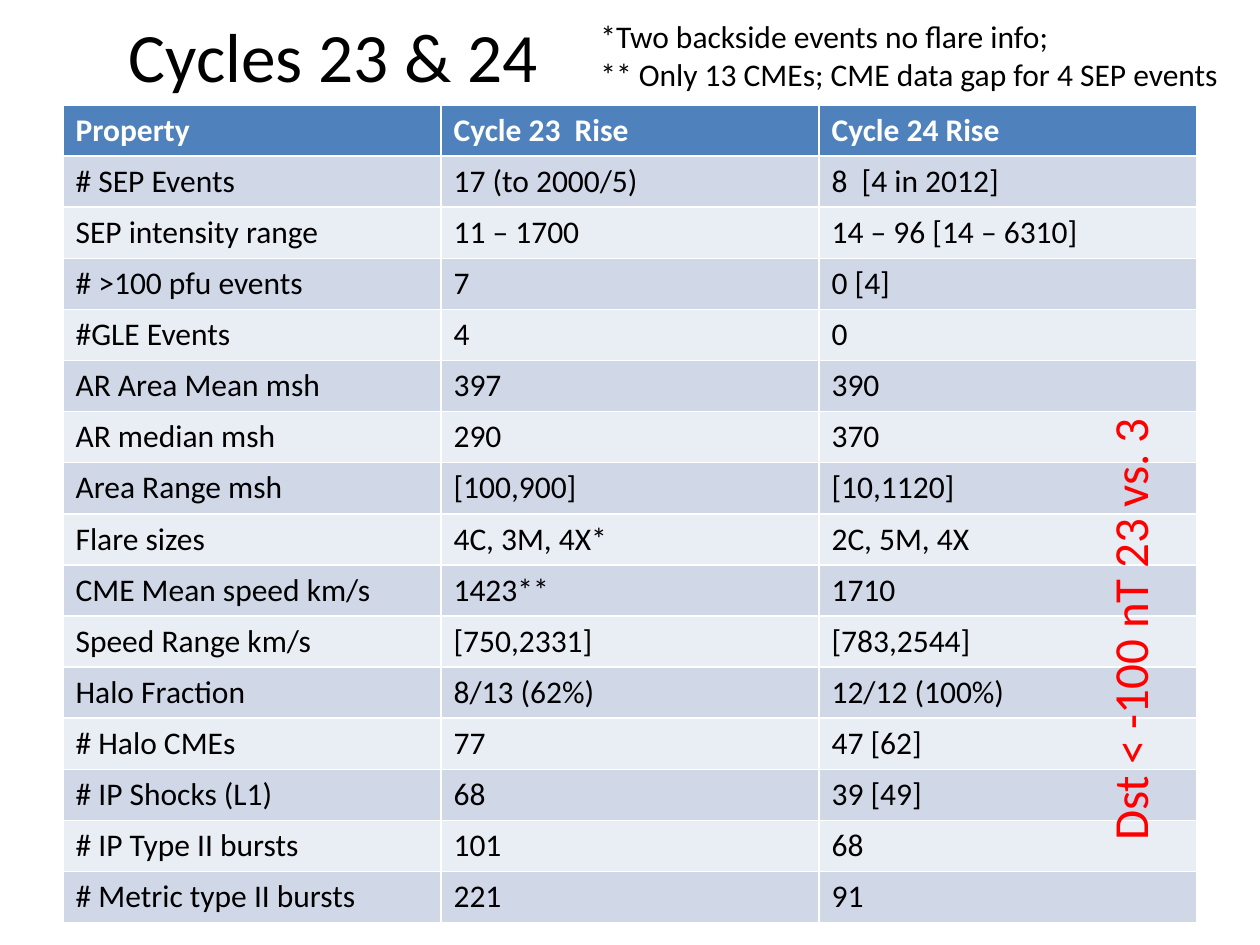
from pptx import Presentation
from pptx.dml.color import RGBColor
from pptx.enum.text import MSO_ANCHOR, MSO_AUTO_SIZE, PP_ALIGN
from pptx.util import Pt

FONT = "Calibri"
BLACK, WHITE, RED = "000000", "FFFFFF", "FF0000"
HEADER_FILL = "4F81BD"
BAND_FILLS = ("E9EDF4", "D0D8E8")
COLUMN_WIDTH, ROW_HEIGHT = 216, 29.2

ROWS = [
    ("Property", "Cycle 23  Rise", "Cycle 24 Rise"),
    ("# SEP Events", "17 (to 2000/5)", "8  [4 in 2012]"),
    ("SEP intensity range", "11 – 1700", "14 – 96 [14 – 6310]"),
    ("# >100 pfu events", "7", "0 [4]"),
    ("#GLE Events", "4", "0"),
    ("AR Area Mean msh", "397", "390"),
    ("AR median msh", "290", "370"),
    ("Area Range msh", "[100,900]", "[10,1120]"),
    ("Flare sizes", "4C, 3M, 4X*", "2C, 5M, 4X"),
    ("CME Mean speed km/s", "1423**", "1710"),
    ("Speed Range km/s", "[750,2331]", "[783,2544]"),
    ("Halo Fraction", "8/13 (62%)", "12/12 (100%)"),
    ("# Halo CMEs", "77", "47 [62]"),
    ("# IP Shocks (L1)", "68", "39 [49]"),
    ("# IP Type II bursts", "101", "68"),
    ("# Metric type II bursts", "221", "91"),
]


def color(value):
    return RGBColor.from_string(value)


def write_text(text_frame, text, size, text_color, bold=False):
    text_frame.text = text
    for paragraph in text_frame.paragraphs:
        for run in paragraph.runs:
            run.font.name = FONT
            run.font.size = Pt(size)
            run.font.bold = bold
            run.font.color.rgb = color(text_color)


def set_title(slide, text, left, top, width, height):
    title = slide.shapes.title
    title.left, title.top = Pt(left), Pt(top)
    title.width, title.height = Pt(width), Pt(height)
    text_frame = title.text_frame
    write_text(text_frame, text, 39.6, BLACK)
    text_frame.auto_size = MSO_AUTO_SIZE.NONE
    text_frame.vertical_anchor = MSO_ANCHOR.MIDDLE
    text_frame.paragraphs[0].alignment = PP_ALIGN.CENTER


def add_property_table(slide, left, top):
    row_count, column_count = len(ROWS), len(ROWS[0])
    table = slide.shapes.add_table(
        row_count, column_count, Pt(left), Pt(top),
        Pt(column_count * COLUMN_WIDTH), Pt(row_count * ROW_HEIGHT),
    ).table
    for column in table.columns:
        column.width = Pt(COLUMN_WIDTH)
    for row_index, values in enumerate(ROWS):
        table.rows[row_index].height = Pt(ROW_HEIGHT)
        header = row_index == 0
        fill = HEADER_FILL if header else BAND_FILLS[row_index % 2]
        for column_index, value in enumerate(values):
            cell = table.cell(row_index, column_index)
            cell.fill.solid()
            cell.fill.fore_color.rgb = color(fill)
            write_text(cell.text_frame, value, 18, WHITE if header else BLACK, header)


def add_note(slide, text, left, top, width, height, size, text_color, rotation=0):
    note = slide.shapes.add_textbox(Pt(left), Pt(top), Pt(width), Pt(height))
    note.rotation = rotation
    note.text_frame.word_wrap = False
    note.text_frame.auto_size = MSO_AUTO_SIZE.SHAPE_TO_FIT_TEXT
    write_text(note.text_frame, text, size, text_color)


def main():
    presentation = Presentation()
    presentation.slide_width, presentation.slide_height = Pt(720), Pt(540)
    slide = presentation.slides.add_slide(presentation.slide_layouts[5])
    set_title(slide, "Cycles 23 & 24 ", 36, 6, 318, 51)
    add_property_table(slide, 36, 60)
    add_note(
        slide,
        "*Two backside events no flare info;\n"
        "** Only 13 CMEs; CME data gap for 4 SEP events",
        336, 6, 371.5, 51, 18, BLACK,
    )
    add_note(slide, "Dst < -100 nT 23 vs. 3", 515, 337, 260, 41, 28, RED, 270)
    presentation.save("out.pptx")


if __name__ == "__main__":
    main()
